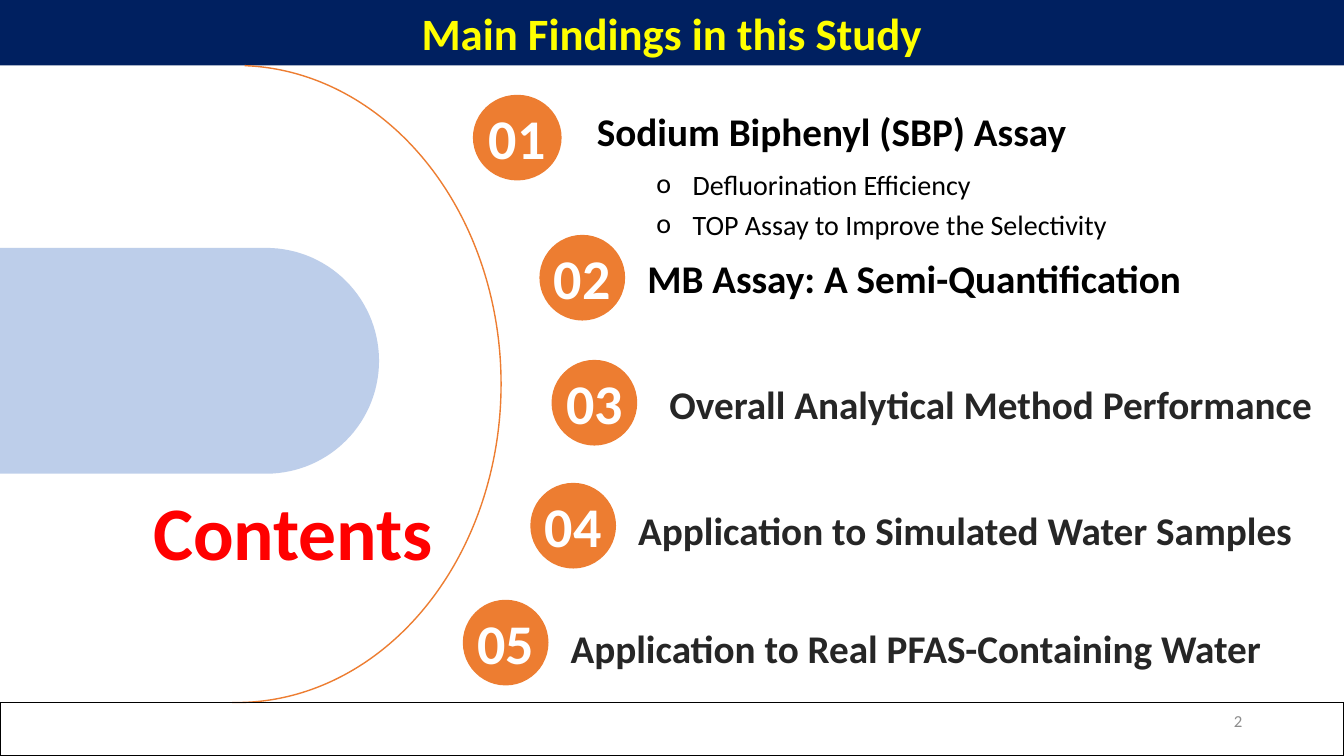
from math import cos, radians, sin

from lxml import etree
from pptx import Presentation
from pptx.dml.color import RGBColor
from pptx.enum.shapes import MSO_SHAPE as SHAPE
from pptx.enum.text import MSO_ANCHOR as ANCHOR, MSO_AUTO_SIZE as AUTOSIZE, PP_ALIGN as ALIGN
from pptx.oxml.ns import qn
from pptx.util import Inches, Pt

ORANGE, BLACK, CHARCOAL = "ED7D31", "000000", "262626"


def style_text(holder, text, size, color, bold=True, align=ALIGN.LEFT,
               anchor=ANCHOR.TOP, side_margin=0.1):
    """Fill a shape or placeholder with a single formatted paragraph."""
    frame = holder.text_frame
    frame.text = text
    settings = {"word_wrap": True, "auto_size": AUTOSIZE.NONE, "vertical_anchor": anchor,
                "margin_left": Inches(side_margin), "margin_right": Inches(side_margin),
                "margin_top": Inches(0.05), "margin_bottom": Inches(0.05)}
    for name, value in settings.items():
        setattr(frame, name, value)
    paragraph = frame.paragraphs[0]
    paragraph.alignment = align
    for name, value in {"name": "Calibri", "size": Pt(size), "bold": bold}.items():
        setattr(paragraph.font, name, value)
    paragraph.font.color.rgb = RGBColor.from_string(color)


def style_shape(shape, fill=None, line=None):
    shape.shadow.inherit = False
    for part, color in ((shape.fill, fill), (shape.line.fill, line)):
        if color:
            part.solid()
            part.fore_color.rgb = RGBColor.from_string(color)
        else:
            part.background()
    if line:
        shape.line.width = Pt(1)


prs = Presentation()
prs.slide_width, prs.slide_height = Inches(13.33), Inches(7.5)
slide = prs.slides.add_slide(prs.slide_layouts[1])
shapes = slide.shapes

# Title band
title = shapes.title
title.left, title.top, title.width, title.height = map(Inches, (0, 0, 13.33, 0.65))
title.fill.solid()
title.fill.fore_color.rgb = RGBColor.from_string("002060")
style_text(title, "Main Findings in this Study", 32, "FFFF00",
           align=ALIGN.CENTER, anchor=ANCHOR.MIDDLE)

# Large arc and the tab rounded on its right side
arc = shapes.add_shape(SHAPE.ARC, *map(Inches, (-0.28, 0.65, 5.25, 6.32)))
arc.adjustments[0], arc.adjustments[1] = 162.892, 54.458
style_shape(arc, line=ORANGE)

center_x, center_y, radius = 2.64, 3.58, 1.12
rounded_end = [(Inches(center_x + radius * cos(radians(angle))),
                Inches(center_y + radius * sin(radians(angle))))
               for angle in range(-90, 91, 3)]
outline = shapes.build_freeform(0, Inches(center_y - radius))
outline.add_line_segments(rounded_end + [(0, Inches(center_y + radius))], close=True)
tab = outline.convert_to_shape()
style_shape(tab, fill="B4C7E7")
tab_color = tab.fill._xPr.find(qn("a:solidFill"))[0]
etree.SubElement(tab_color, qn("a:alpha"), val="87000")

contents = shapes.add_textbox(*map(Inches, (1.42, 4.76, 3.58, 1.01)))
style_text(contents, "Contents", 54, "FF0000", anchor=ANCHOR.MIDDLE)

# Numbered findings: circle left, top, width; heading left, top, width, colour
findings = [
    ("Sodium Biphenyl (SBP) Assay", 4.69, 0.94, 0.88, 5.8, 1.02, 7.34, BLACK),
    ("MB Assay: A Semi-Quantification", 5.35, 2.33, 0.85, 6.3, 2.47, 6.46, BLACK),
    ("Overall Analytical Method Performance", 5.47, 3.57, 0.85, 6.52, 3.72, 6.94, CHARCOAL),
    ("Application to Simulated Water Samples", 5.26, 4.79, 0.85, 6.21, 4.97, 6.75, CHARCOAL),
    ("Application to Real PFAS-Containing Water", 4.59, 5.95, 0.85, 5.54, 6.14, 8.8, CHARCOAL),
]
for number, (finding, x, y, diameter, text_x, text_y, text_width, color) in enumerate(findings, 1):
    circle = shapes.add_shape(SHAPE.OVAL, *map(Inches, (x, y, diameter, 0.85)))
    style_shape(circle, fill=ORANGE)
    label = shapes.add_textbox(*map(Inches, (x - 0.1, y + 0.04, diameter + 0.2, 0.77)))
    style_text(label, f"{number:02}", 40, "FFFFFF", align=ALIGN.CENTER, side_margin=0.12)
    heading = shapes.add_textbox(*map(Inches, (text_x, text_y, text_width, 0.57)))
    style_text(heading, finding, 28, color, side_margin=0.12)

# Details of the first finding
details = slide.placeholders[1]
details.left, details.top, details.width, details.height = map(Inches, (6.04, 1.54, 6.69, 0.88))
style_text(details, "Defluorination Efficiency", 20, BLACK, bold=False)
details.text_frame.add_paragraph().text = "TOP Assay to Improve the Selectivity"
for detail in details.text_frame.paragraphs:
    properties = detail._p.get_or_add_pPr()
    properties.set("marL", str(Inches(0.73)))
    properties.set("indent", str(Inches(-0.36)))
    for old in properties.findall(qn("a:defRPr")):
        properties.remove(old)
    etree.SubElement(properties, qn("a:buFont"), typeface="Calibri")
    etree.SubElement(properties, qn("a:buChar"), char="o")
    detail.line_spacing = 1.2
    detail.space_before = Pt(0)
    for name, value in {"name": "Calibri", "size": Pt(20), "bold": False}.items():
        setattr(detail.font, name, value)
    detail.font.color.rgb = RGBColor.from_string(BLACK)

# Footer frame and page number
footer = shapes.add_shape(SHAPE.RECTANGLE, *map(Inches, (0, 6.97, 13.33, 0.53)))
style_shape(footer, line=BLACK)
page_number = shapes.add_textbox(*map(Inches, (9.42, 6.95, 3, 0.4)))
style_text(page_number, "2", 12, "8C8C8C", bold=False, align=ALIGN.RIGHT, anchor=ANCHOR.MIDDLE)

prs.save("out.pptx")
